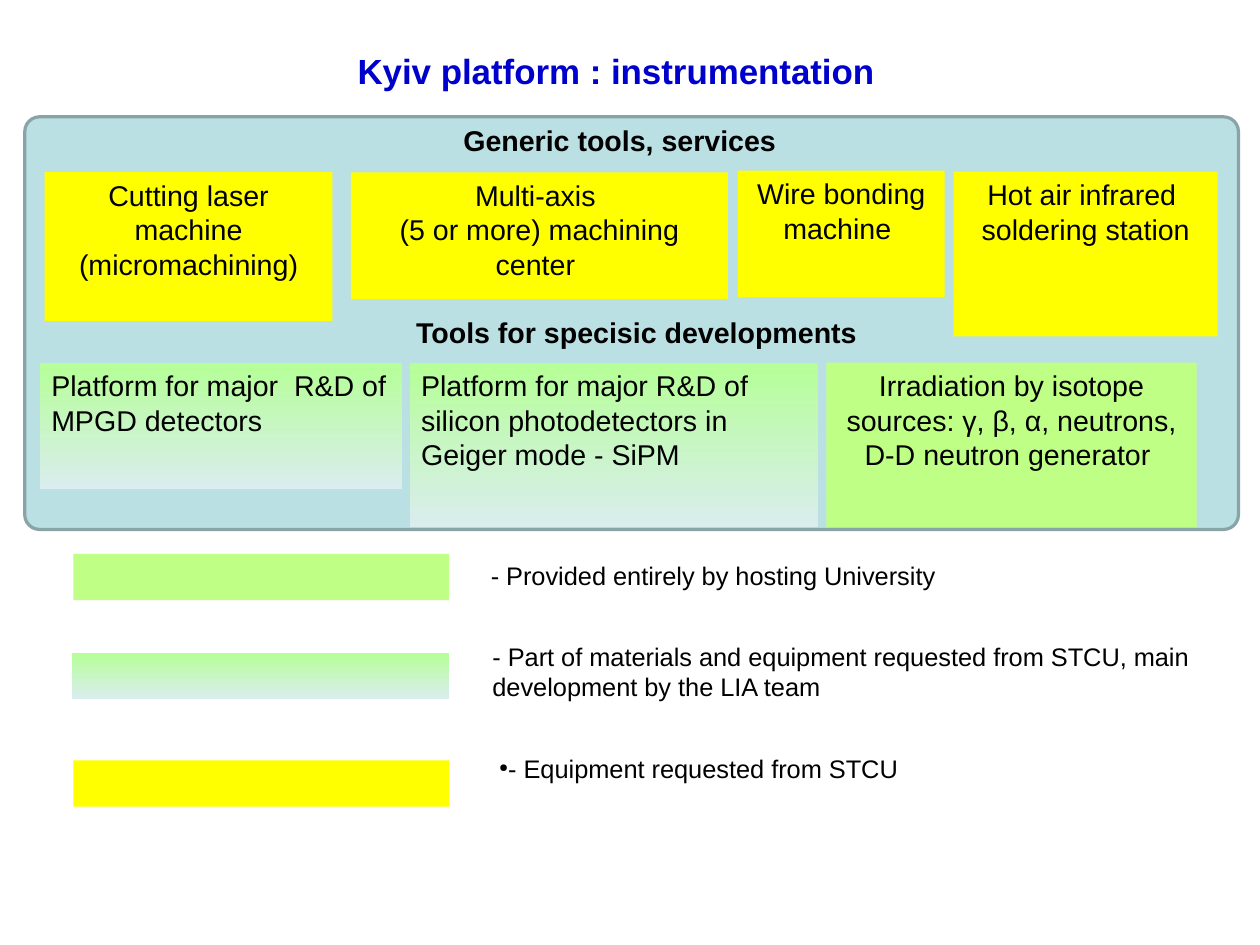
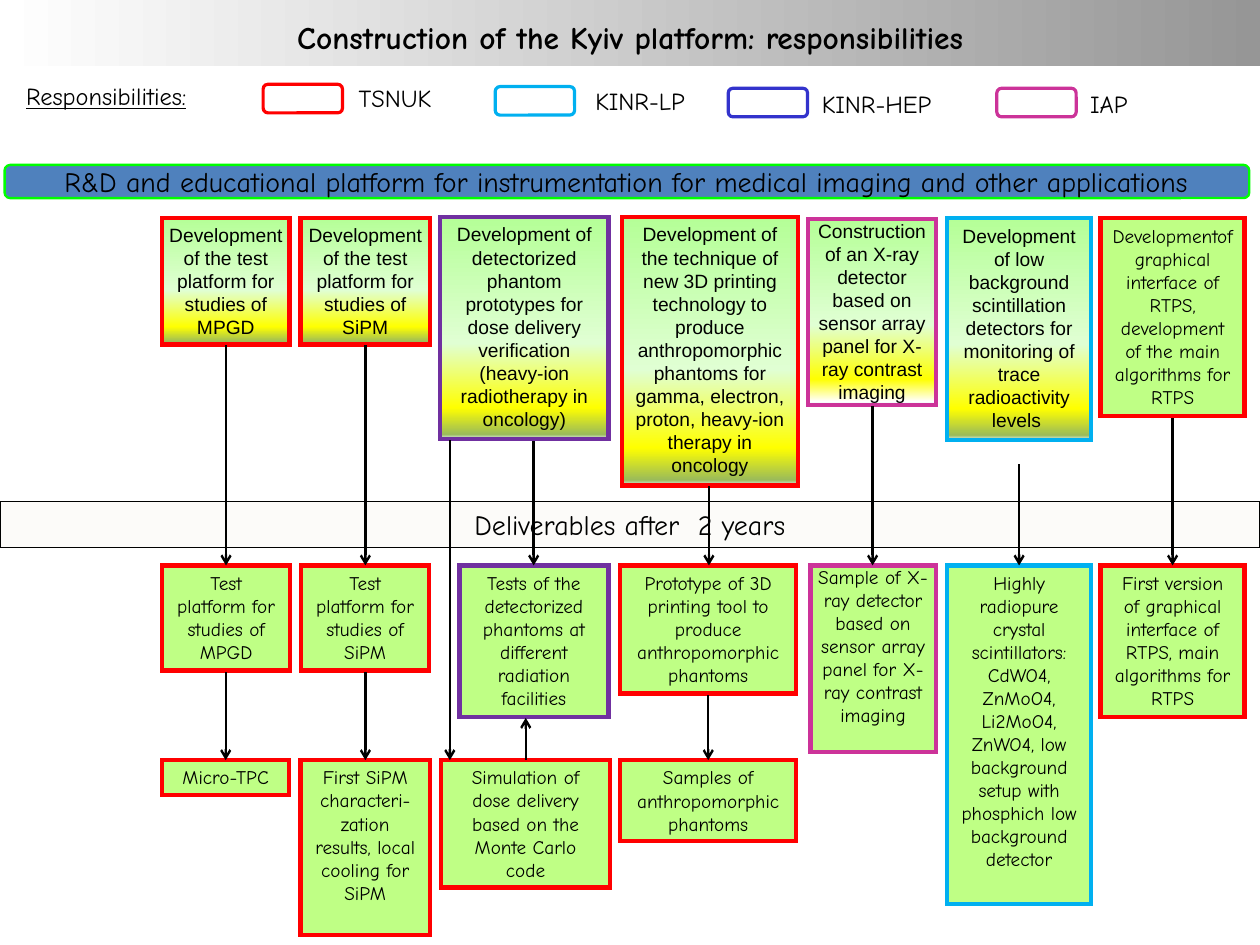
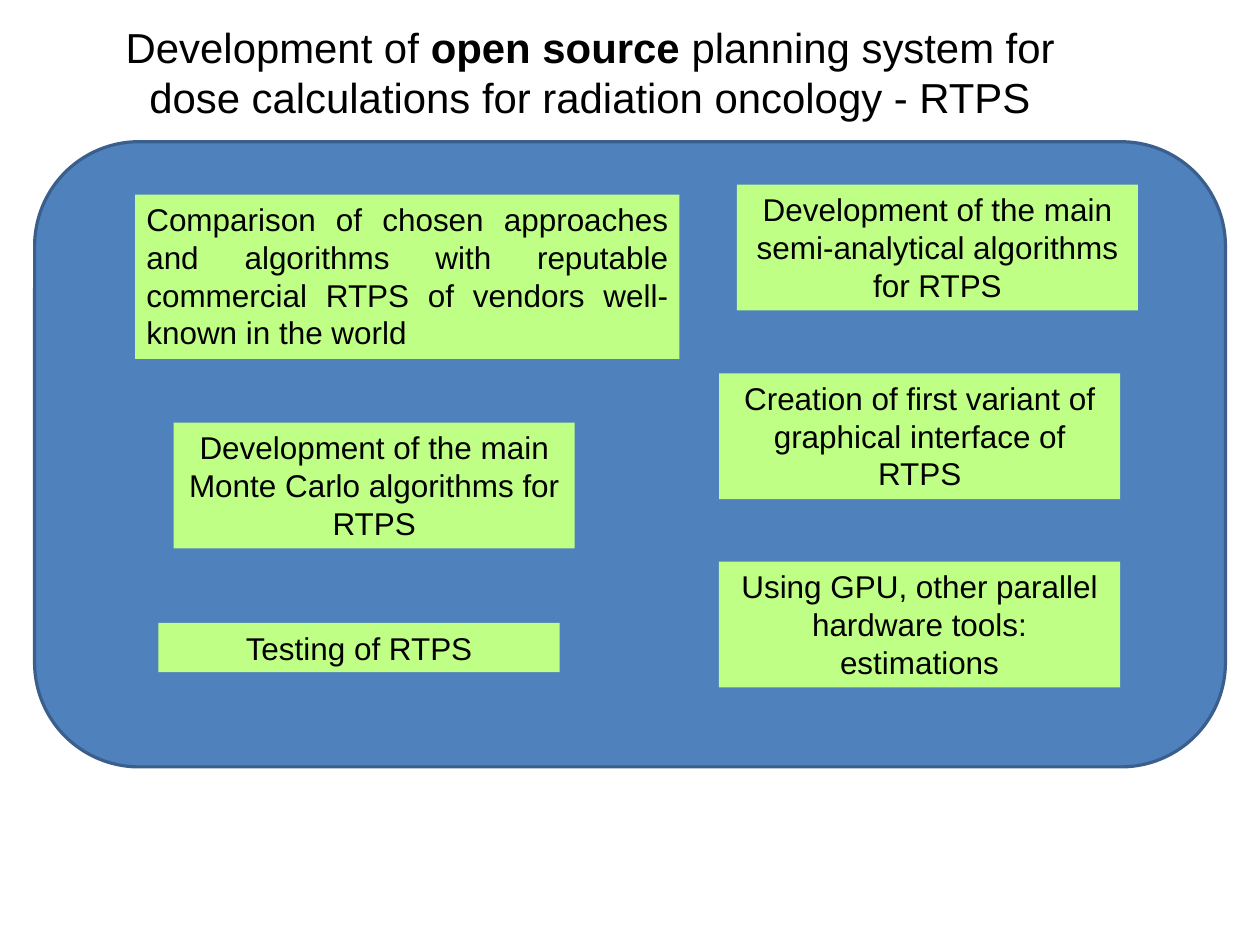
import lxml.etree
import pptx
import pptx.dml.color
import pptx.enum.shapes
import pptx.enum.text
import pptx.oxml.ns
import pptx.util

Pt = pptx.util.Pt
RGBColor = pptx.dml.color.RGBColor
SHAPE = pptx.enum.shapes.MSO_SHAPE
ALIGN = pptx.enum.text.PP_ALIGN
ANCHOR = pptx.enum.text.MSO_ANCHOR

BLACK = RGBColor(0, 0, 0)
WHITE = RGBColor(255, 255, 255)
GRAY = RGBColor(0x96, 0x96, 0x96)
OFF_WHITE = RGBColor(0xFC, 0xFB, 0xF9)
YELLOW = RGBColor(0xFF, 0xFF, 0x00)
LIME = RGBColor(0xBF, 0xFF, 0x85)
MINT = RGBColor(0xB5, 0xFF, 0x97)
PALE_MINT = RGBColor(0xE0, 0xFF, 0xD3)
OLIVE = RGBColor(0x9B, 0xBB, 0x59)
ICE = RGBColor(0xDA, 0xED, 0xEF)
AQUA = RGBColor(0xBB, 0xE0, 0xE3)
DARK_AQUA = RGBColor(0x89, 0xA4, 0xA7)
STEEL = RGBColor(0x4F, 0x81, 0xBD)
DARK_STEEL = RGBColor(0x3A, 0x5F, 0x8C)
TITLE_BLUE = RGBColor(0, 0, 0xCC)
RED = RGBColor(0xFF, 0, 0)
GREEN = RGBColor(0, 0xFF, 0)
SKY = RGBColor(0, 0xB0, 0xF0)
INDIGO = RGBColor(0x33, 0x33, 0xCC)
PURPLE = RGBColor(0x70, 0x30, 0xA0)
MAGENTA = RGBColor(0xCC, 0x33, 0x99)

PARTLY_REQUESTED = [(0, MINT), (100, ICE)]
DEVELOPMENT = [(0, MINT), (57, PALE_MINT), (86, YELLOW), (98, OLIVE), (100, ICE)]
XRAY_DEVELOPMENT = [(0, MINT), (57, PALE_MINT), (86, YELLOW), (98, WHITE), (100, ICE)]
HEADER_FADE = [(0, WHITE), (100, GRAY)]

WIDTH, HEIGHT = 793.75, 595.25


def add_child(parent, tag, **attributes):
    return lxml.etree.SubElement(parent, pptx.oxml.ns.qn(tag), attributes)


def write_text(frame, text, size=18, font="Arial", color=BLACK, bold=False,
               underline=False, align=ALIGN.LEFT, anchor=ANCHOR.TOP,
               insets=(7.2, 3.6), spacing=None, before=0, bullet=None):
    frame.word_wrap = True
    frame.vertical_anchor = anchor
    frame.margin_left = frame.margin_right = Pt(insets[0])
    frame.margin_top = frame.margin_bottom = Pt(insets[1])
    for index, line in enumerate(text.split("\n")):
        paragraph = frame.add_paragraph() if index else frame.paragraphs[0]
        paragraph.alignment = align
        paragraph.space_before = Pt(before)
        if spacing:
            paragraph.line_spacing = spacing
        if bullet:
            properties = paragraph._p.get_or_add_pPr()
            add_child(properties, "a:buSzPct", val="45000")
            add_child(properties, "a:buChar", char=bullet)
        for part, words in enumerate(line.split("**")):
            run = paragraph.add_run()
            run.text = words
            run.font.size = Pt(size)
            run.font.name = font
            run.font.color.rgb = color
            run.font.bold = bold or part % 2 == 1
            run.font.underline = underline


class Deck:
    def __init__(self):
        self.presentation = pptx.Presentation()
        self.presentation.slide_width = Pt(WIDTH)
        self.presentation.slide_height = Pt(HEIGHT)
        self.slide = None

    def new_slide(self):
        self.slide = self.presentation.slides.add_slide(self.presentation.slide_layouts[6])

    def box(self, left, top, width, height, text=None, fill=None, line=None,
            line_width=2, rounding=None, angle=90, **text_format):
        kind = SHAPE.RECTANGLE if rounding is None else SHAPE.ROUNDED_RECTANGLE
        shape = self.slide.shapes.add_shape(kind, Pt(left), Pt(top), Pt(width), Pt(height))
        shape.shadow.inherit = False
        if rounding is not None:
            shape.adjustments[0] = rounding
        if fill is None:
            shape.fill.background()
        elif isinstance(fill, list):
            self.fade(shape, fill, angle)
        else:
            shape.fill.solid()
            shape.fill.fore_color.rgb = fill
        if line is None:
            shape.line.fill.background()
        else:
            shape.line.color.rgb = line
            shape.line.width = Pt(line_width)
            add_child(shape.line._get_or_add_ln(), "a:miter", lim="800000")
        if text:
            write_text(shape.text_frame, text, **{"align": ALIGN.CENTER, **text_format})

    def fade(self, shape, stops, angle):
        shape.fill.gradient()
        shape.fill.gradient_angle = -angle % 360
        stop_list = shape._element.spPr.find(".//" + pptx.oxml.ns.qn("a:gsLst"))
        stop_list.clear()
        for position, color in stops:
            stop = add_child(stop_list, "a:gs", pos=str(position * 1000))
            add_child(stop, "a:srgbClr", val=str(color))

    def label(self, left, top, width, height, text, **text_format):
        shape = self.slide.shapes.add_textbox(Pt(left), Pt(top), Pt(width), Pt(height))
        write_text(shape.text_frame, text, **text_format)

    def arrow(self, x, start, end):
        connector = self.slide.shapes.add_connector(
            pptx.enum.shapes.MSO_CONNECTOR.STRAIGHT, Pt(x), Pt(start), Pt(x), Pt(end))
        connector.line.color.rgb = BLACK
        connector.line.width = Pt(1.5)
        add_child(connector.line._get_or_add_ln(), "a:tailEnd", type="arrow")
        add_child(connector._element.spPr, "a:effectLst")


def build_instrumentation(deck):
    deck.new_slide()
    deck.box(15.6, 73.6, 764.6, 259.9, fill=AQUA, line=DARK_AQUA, rounding=0.036)
    generic_tools = [
        (28.1, 108.5, 181.4, 93.6, "Cutting laser machine (micromachining)"),
        (221, 108.5, 237.6, 79.9, "Multi-axis \n(5 or more) machining center "),
        (464.8, 107.5, 130.3, 79.9, "Wire bonding machine "),
        (600.8, 108.2, 166.3, 103.7, "Hot air infrared  soldering station"),
    ]
    for tool in generic_tools:
        deck.box(*tool, fill=YELLOW)
    platforms = [
        (25.2, 228, 79.5, "Platform for major  R&D of MPGD detectors"),
        (258.2, 257, 103.7,
         "Platform for major R&D of silicon photodetectors in Geiger mode - SiPM"),
    ]
    for left, width, height, text in platforms:
        deck.box(left, 228.4, width, height, text, fill=PARTLY_REQUESTED, align=ALIGN.LEFT)
    deck.box(520.6, 228.4, 233.3, 103.7,
             "Irradiation by isotope sources: γ, β, α, neutrons,\nD-D neutron generator ",
             fill=LIME)

    legend = [
        (46.2, 348.9, 236.8, LIME, 302.1, 349.2, 455, 29.5,
         "- Provided entirely by hosting University", None),
        (45.4, 411.1, 237.6, PARTLY_REQUESTED, 303.1, 400.3, 462.2, 50.4,
         "- Part of materials and equipment requested from STCU, "
         "main development by the LIA team", None),
        (46.2, 479, 236.8, YELLOW, 307.4, 470.9, 457.9, 71.3,
         "- Equipment requested from STCU", "●"),
    ]
    for (swatch_left, swatch_top, swatch_width, fill,
         left, top, width, height, text, bullet) in legend:
        deck.box(swatch_left, swatch_top, swatch_width, 29.2, fill=fill)
        deck.label(left, top, width, height, text, size=16, bullet=bullet)

    deck.label(284.8, 74.2, 270, 31.7, "Generic tools, services", bold=True)
    deck.label(255.1, 195.1, 371.5, 31.7, "Tools for specisic developments", bold=True)
    deck.label(203.8, 22.3, 368.6, 31.7, "Kyiv platform : instrumentation", size=22,
               color=TITLE_BLUE, bold=True, align=ALIGN.CENTER, spacing=1.2)


def build_responsibilities(deck):
    comic = {"font": "Comic Neue"}
    development_top, deliverable_top, result_top = 137.5, 356.2, 478.8
    deck.new_slide()
    deck.box(0, 0, WIDTH, 41.8, "Construction of the Kyiv platform: responsibilities",
             fill=HEADER_FADE, angle=0, size=19.8, bold=True, anchor=ANCHOR.MIDDLE,
             insets=(7.2, 0), spacing=1.2, before=4, **comic)
    deck.label(9.4, 47.5, 132.5, 25.9, "Responsibilities:", size=15.4, underline=True, **comic)
    legend = [
        (165.8, 53.1, RED, 218.9, 49, "TSNUK"),
        (312, 54.5, SKY, 367.9, 50.6, "KINR-LP"),
        (458.8, 55.6, INDIGO, 510.6, 52.4, "KINR-HEP"),
        (628, 55.6, MAGENTA, 679.7, 52.4, "IAP"),
    ]
    for left, top, color, text_left, text_top, text in legend:
        deck.box(left, top, 50, 18, line=color, rounding=0.167)
        deck.label(text_left, text_top, 95, 25.9, text, size=15.4, before=3.3, **comic)

    deck.box(2.9, 103.9, 784.1, 20.9,
             "R&D and educational platform for instrumentation for medical imaging "
             "and other applications", fill=STEEL, line=GREEN, line_width=1.5,
             rounding=0.167, size=17.6, anchor=ANCHOR.MIDDLE, **comic)
    deck.box(0, 316.1, WIDTH, 28.8, "Deliverables after  2 years", fill=OFF_WHITE,
             line=BLACK, line_width=0.75, size=17.6, **comic)

    normal, narrow, xray = (7.2, 3.6), (2.9, 2.9), (2.9, 0)
    developments = [
        (102.2, development_top, 80.2, 79.6, RED, narrow, DEVELOPMENT,
         "Development of the test platform for studies of MPGD"),
        (189.4, development_top, 81.4, 79.6, RED, narrow, DEVELOPMENT,
         "Development of the test platform for studies of SiPM"),
        (277.2, 136.8, 106.2, 139.7, PURPLE, normal, DEVELOPMENT,
         "Development of detectorized phantom prototypes for dose delivery "
         "verification (heavy-ion radiotherapy in oncology)"),
        (391.9, 136.8, 110.7, 169, RED, normal, DEVELOPMENT,
         "Development of the technique of new 3D printing technology to produce "
         "anthropomorphic phantoms for gamma, electron, proton, heavy-ion therapy in oncology"),
        (509.2, 137.9, 80.4, 117.4, MAGENTA, xray, XRAY_DEVELOPMENT,
         "Construction of an X-ray detector based on sensor array panel "
         "for X-ray contrast imaging"),
        (596.7, development_top, 90.7, 139.5, SKY, normal, DEVELOPMENT,
         "Development of low background scintillation detectors for monitoring "
         "of trace radioactivity levels "),
    ]
    for left, top, width, height, color, insets, fill, text in developments:
        deck.box(left, top, width, height, text, fill=fill, line=color,
                 line_width=2.75, size=12.1, insets=insets)

    green_boxes = [
        (693.4, development_top, 90.7, 124.6, RED, normal,
         "Developmentof graphical interface of RTPS, development of the main "
         "algorithms for RTPS"),
        (102.2, deliverable_top, 80.6, 66.2, RED, normal, "Test platform for studies of MPGD"),
        (189.7, deliverable_top, 80.6, 66.2, RED, normal, "Test platform for studies of SiPM"),
        (289.4, deliverable_top, 93.9, 95.6, PURPLE, normal,
         "Tests of the detectorized phantoms at different radiation facilities"),
        (390.7, deliverable_top, 110.9, 80.6, RED, normal,
         "Prototype of 3D printing tool to produce anthropomorphic phantoms"),
        (510.5, deliverable_top, 79, 117.4, MAGENTA, xray,
         "Sample of X-ray detector based on sensor array panel for X-ray contrast imaging"),
        (596.7, deliverable_top, 90.7, 213.1, SKY, normal,
         "Highly radiopure crystal scintillators: CdWO4, ZnMoO4, Li2MoO4, ZnWO4, "
         "low background setup with phosphich low background detector"),
        (693.4, deliverable_top, 90.7, 95.6, RED, normal,
         "First version of graphical interface of RTPS, main algorithms for RTPS"),
        (102.2, result_top, 79.9, 22.1, RED, normal, "Micro-TPC"),
        (189.4, result_top, 81.4, 110.2, RED, normal,
         "First SiPM characteri-zation results, local cooling for SiPM"),
        (277.9, result_top, 106.4, 80.4, RED, normal,
         "Simulation of dose delivery based on the Monte Carlo code"),
        (390.7, result_top, 110.9, 51.1, RED, normal, "Samples of anthropomorphic phantoms"),
    ]
    for left, top, width, height, color, insets, text in green_boxes:
        deck.box(left, top, width, height, text, fill=LIME, line=color,
                 line_width=2.75, size=12.1, insets=insets, **comic)

    to_deliverables = [(142.4, 217.4), (230.2, 217.4), (336.2, 277.9), (446.6, 306),
                       (549.7, 255.6), (642, 292.3), (738.7, 263.5)]
    for x, start in to_deliverables:
        deck.arrow(x, start, deliverable_top)
    to_results = [(142.2, 423.4), (230.2, 423.4), (283.4, 277.2), (446.2, 437.8)]
    for x, start in to_results:
        deck.arrow(x, start, result_top)
    deck.arrow(331.2, result_top, 452.2)


def build_planning_system(deck):
    deck.new_slide()
    deck.label(53.3, 10.1, 637.2, 71.3,
               "Development of **open source **planning system for dose calculations "
               "for radiation oncology - RTPS", size=26.4, align=ALIGN.CENTER)
    deck.box(21.8, 89.3, 750.2, 393.8, fill=STEEL, line=DARK_STEEL, rounding=0.167)
    deck.box(85.1, 122.6, 342.9, 103.5,
             "Comparison of chosen approaches and algorithms with reputable commercial "
             "RTPS of vendors well-known in the world",
             fill=LIME, size=19.8, align=ALIGN.JUSTIFY)
    tasks = [
        (109.4, 266.2, 79.2, "Development of the main Monte Carlo algorithms for RTPS"),
        (99.8, 392.4, 31, "Testing of RTPS"),
        (464.2, 116.3, 79.2, "Development of the main semi-analytical algorithms for RTPS"),
        (453, 235.2, 79.2, "Creation of first variant of graphical interface of RTPS"),
        (452.9, 353.8, 79.2, "Using GPU, other parallel hardware tools: estimations"),
    ]
    for left, top, height, text in tasks:
        deck.box(left, top, 252.7, height, text, fill=LIME, size=19.8)


def main():
    deck = Deck()
    build_instrumentation(deck)
    build_responsibilities(deck)
    build_planning_system(deck)
    deck.presentation.save("out.pptx")


if __name__ == "__main__":
    main()
